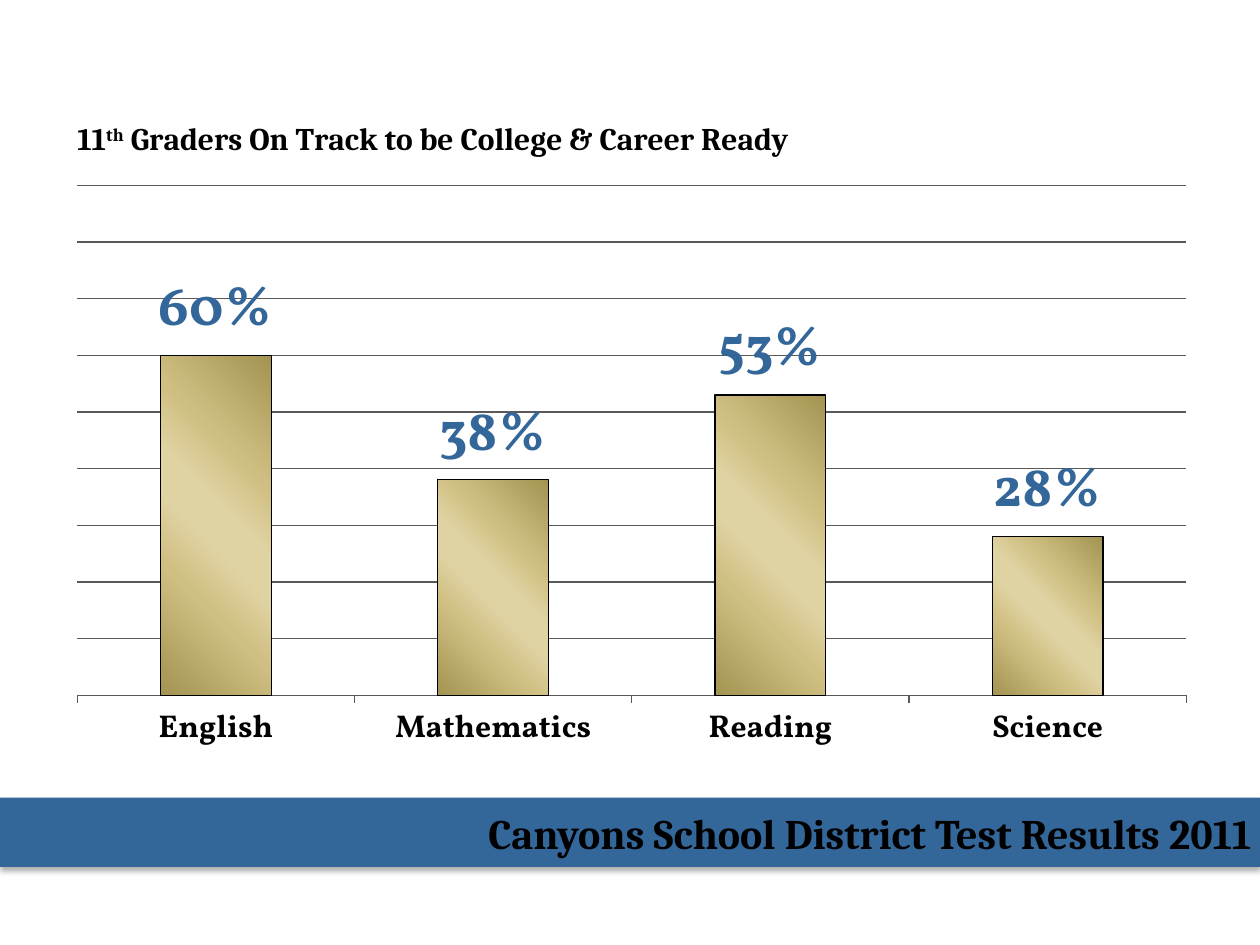
from dataclasses import dataclass

from lxml import etree
from pptx import Presentation
from pptx.chart.data import CategoryChartData
from pptx.dml.color import RGBColor
from pptx.enum.chart import XL_CHART_TYPE as ChartType
from pptx.enum.chart import XL_LABEL_POSITION as LabelPosition
from pptx.enum.chart import XL_TICK_LABEL_POSITION as TickLabels
from pptx.enum.chart import XL_TICK_MARK as TickMark
from pptx.enum.shapes import MSO_SHAPE as Shape
from pptx.enum.text import MSO_ANCHOR as Anchor
from pptx.enum.text import PP_ALIGN as Align
from pptx.oxml import parse_xml
from pptx.oxml.ns import nsdecls, qn
from pptx.util import Inches, Pt

COLORS = {
    "banner": "336699", "text": "000000", "grid": "595959",
    "dark": "A39451", "gold": "D0BF82", "light": "E0D3A3",
}
TITLE_FONT, CHART_FONT = "Cambria", "Vollkorn"


@dataclass
class Score:
    subject: str
    share: float


SCORES = [Score("English", 0.6), Score("Mathematics", 0.38),
          Score("Reading", 0.53), Score("Science", 0.28)]

# Position along the gradient in percent, and the colour there
BAR_STOPS = [(0, "dark"), (30, "gold"), (45, "light"),
             (55, "light"), (70, "gold"), (100, "dark")]


def color(name: str) -> RGBColor:
    return RGBColor.from_string(COLORS[name])


def style_font(font, size: float, name: str, shade: str = "text",
               bold: bool = True) -> None:
    font.size, font.name, font.bold = Pt(size), name, bold
    font.color.rgb = color(shade)


def set_layout(parent, index: int, shares: dict, inner: bool = False) -> None:
    """Place a chart part by shares of the chart's size."""
    for old in parent.findall(qn("c:layout")):
        parent.remove(old)
    layout = etree.Element(qn("c:layout"))
    manual = etree.SubElement(layout, qn("c:manualLayout"))
    settings = {"layoutTarget": "inner"} if inner else {}
    settings |= {"xMode": "edge", "yMode": "edge", **shares}
    for tag, value in settings.items():
        etree.SubElement(manual, qn(f"c:{tag}")).set("val", str(value))
    parent.insert(index, layout)


def fill_bars(series) -> None:
    series.format.line.color.rgb = color("text")
    series.format.line.width = Pt(0.75)
    stops = "".join(
        f'<a:gs pos="{place * 1000}"><a:srgbClr val="{COLORS[name]}"/></a:gs>'
        for place, name in BAR_STOPS)
    gradient = parse_xml(
        f'<a:gradFill {nsdecls("a")} rotWithShape="1"><a:gsLst>{stops}</a:gsLst>'
        '<a:lin ang="18900000" scaled="0"/></a:gradFill>')
    series._element.find(qn("c:spPr")).insert(0, gradient)


def add_title(chart) -> None:
    title = chart.chart_title
    para = title.text_frame.paragraphs[0]
    for text in ("11", "th", " Graders On Track to be College & Career Ready"):
        span = para.add_run()
        span.text = text
        style_font(span.font, 18, TITLE_FONT)
        if text == "th":
            span.font._element.set("baseline", "30000")
    title.include_in_layout = False
    set_layout(title._element, 1, {"x": 0.152, "y": 0.015})


def add_score_chart(page, scores: list[Score]) -> None:
    data = CategoryChartData(number_format="0%")
    data.categories = [score.subject for score in scores]
    data.add_series("Series 1", [score.share for score in scores])
    chart = page.shapes.add_chart(
        ChartType.COLUMN_CLUSTERED, Inches(-1), Inches(0.83),
        Inches(10.42), Inches(5.67), data).chart
    chart.has_legend = False
    style_font(chart.font, 10, CHART_FONT, bold=False)
    add_title(chart)

    # Axes
    categories, values = chart.category_axis, chart.value_axis
    categories.major_tick_mark = TickMark.OUTSIDE
    categories.tick_label_position = TickLabels.LOW
    style_font(categories.tick_labels.font, 18, CHART_FONT)
    values.minimum_scale, values.maximum_scale = 0, 0.9
    values.major_unit = 0.1
    values.has_major_gridlines = True
    values.visible = False
    for line in (categories.format.line, values.major_gridlines.format.line):
        line.color.rgb = color("grid")
        line.width = Pt(0.75)

    # Bars and their labels
    plot = chart.plots[0]
    plot.gap_width = 150
    plot.vary_by_categories = False
    fill_bars(plot.series[0])
    labels = plot.series[0].data_labels
    labels.show_value = True
    labels.number_format, labels.number_format_is_linked = "0%", False
    labels.position = LabelPosition.OUTSIDE_END
    style_font(labels.font, 32, CHART_FONT, "banner")

    set_layout(chart._chartSpace.chart.plotArea, 0,
               {"x": 0.155, "y": 0.113, "w": 0.845, "h": 0.714}, inner=True)


def add_banner(page, width: int, text: str) -> None:
    banner = page.shapes.add_shape(
        Shape.RECTANGLE, 0, Inches(6.33), width, Inches(0.55))
    banner.fill.solid()
    banner.fill.fore_color.rgb = color("banner")
    banner.line.fill.background()
    banner.shadow.inherit = False
    effects = banner._element.spPr.find(qn("a:effectLst"))
    effects.append(parse_xml(
        f'<a:outerShdw {nsdecls("a")} blurRad="{Pt(3.5)}" dist="{Pt(2.2)}" '
        'dir="5400000" rotWithShape="0"><a:srgbClr val="000000">'
        '<a:alpha val="32000"/></a:srgbClr></a:outerShdw>'))

    frame = banner.text_frame
    frame.text = text
    frame.word_wrap = True
    frame.vertical_anchor = Anchor.MIDDLE
    frame.margin_left = frame.margin_right = Inches(0.07)
    frame.margin_top = frame.margin_bottom = Inches(0.04)
    para = frame.paragraphs[0]
    para.alignment = Align.RIGHT
    style_font(para.runs[0].font, 24, TITLE_FONT)


def main() -> None:
    deck = Presentation()
    deck.slide_width, deck.slide_height = Inches(10), Inches(7.5)
    page = deck.slides.add_slide(deck.slide_layouts[6])
    add_score_chart(page, SCORES)
    add_banner(page, deck.slide_width, "Canyons School District Test Results 2011")
    deck.save("out.pptx")


if __name__ == "__main__":
    main()
